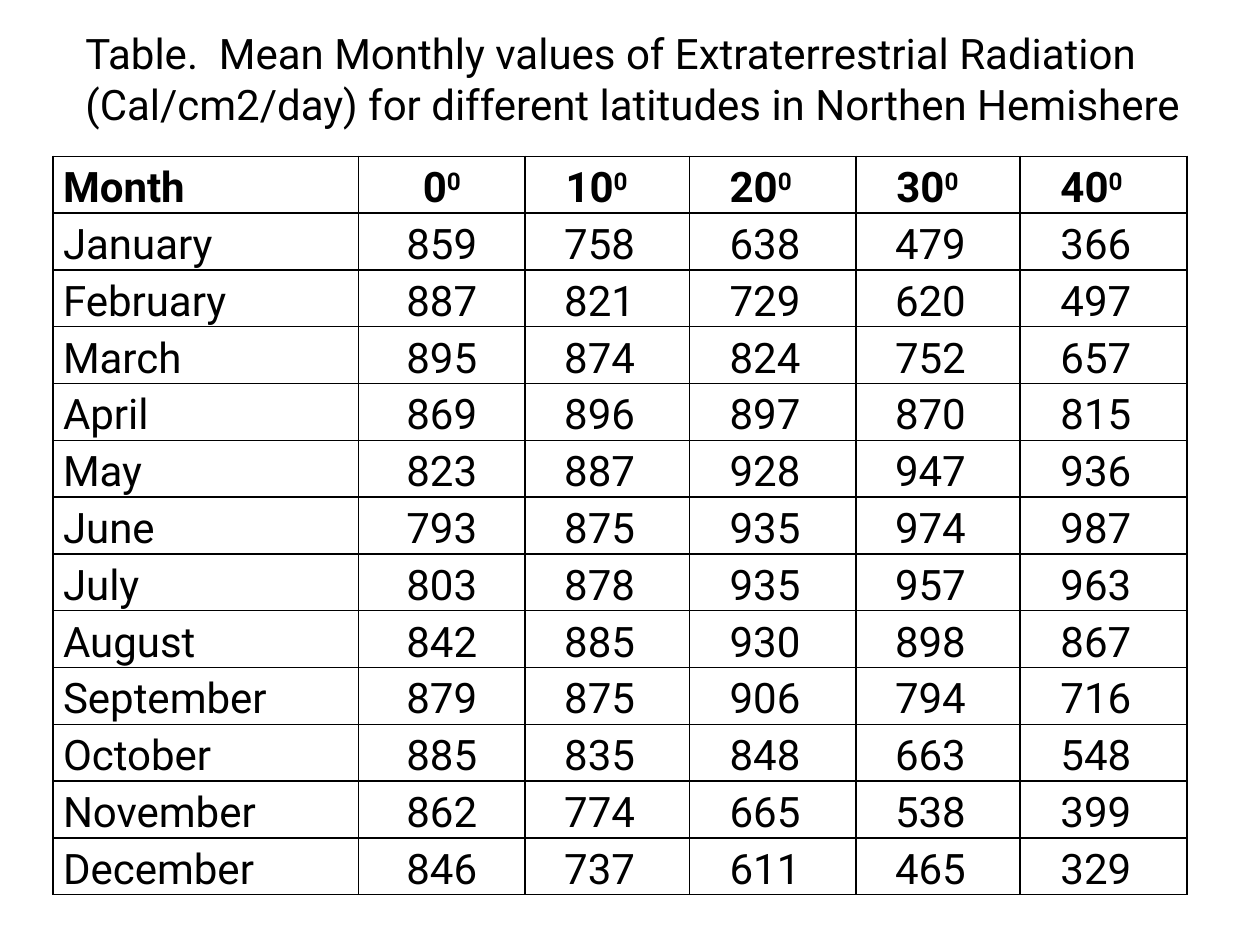
import pptx
import pptx.dml.color
import pptx.enum.text
import pptx.oxml
import pptx.oxml.ns
import pptx.util

SLIDE_W, SLIDE_H = 10, 7.5
FONT, SIZE, INK = "Roboto", 24, "000000"
CAPTION = ("Table.  Mean Monthly values of Extraterrestrial Radiation "
           "(Cal/cm2/day) for different latitudes in Northen Hemishere")
LATITUDES = [0, 10, 20, 30, 40]
RADIATION = {
    "January": [859, 758, 638, 479, 366],
    "February": [887, 821, 729, 620, 497],
    "March": [895, 874, 824, 752, 657],
    "April": [869, 896, 897, 870, 815],
    "May": [823, 887, 928, 947, 936],
    "June": [793, 875, 935, 974, 987],
    "July": [803, 878, 935, 957, 963],
    "August": [842, 885, 930, 898, 867],
    "September": [879, 875, 906, 794, 716],
    "October": [885, 835, 848, 663, 548],
    "November": [862, 774, 665, 538, 399],
    "December": [846, 737, 611, 465, 329],
}
COLUMN_WIDTHS = [2.42, 1.32, 1.3, 1.32, 1.3, 1.32]
INDENTS = [0.08, None, 0.31, 0.32, 0.31, 0.32]  # None: centred column
HEADER_INDENT = 0.32
ROW_HEIGHT = 0.39


def inches(*lengths):
    return [pptx.util.Inches(length) for length in lengths]


def color(hex_string):
    return pptx.dml.color.RGBColor.from_string(hex_string)


def style_text(paragraph, bold=False):
    font = paragraph.font
    font.name, font.size, font.bold = FONT, pptx.util.Pt(SIZE), bold
    font.color.rgb = color(INK)


def border_cell(cell):
    properties = cell._tc.get_or_add_tcPr()
    for side in ("lnL", "lnR", "lnT", "lnB"):
        properties.append(pptx.oxml.parse_xml(
            f'<a:{side} {pptx.oxml.ns.nsdecls("a")} w="{pptx.util.Pt(1)}">'
            f'<a:solidFill><a:srgbClr val="{INK}"/></a:solidFill></a:{side}>'))


def fill_cell(cell, text, indent, header=False, degree=False):
    border_cell(cell)
    cell.fill.background()
    cell.margin_left = cell.margin_right = cell.margin_top = cell.margin_bottom = 0
    cell.vertical_anchor = pptx.enum.text.MSO_ANCHOR.BOTTOM
    paragraph = cell.text_frame.paragraphs[0]
    paragraph.line_spacing = 1.15
    if indent is None:
        paragraph.alignment = pptx.enum.text.PP_ALIGN.CENTER
    else:
        paragraph.alignment = pptx.enum.text.PP_ALIGN.LEFT
        paragraph._p.get_or_add_pPr().set("marL", str(pptx.util.Inches(indent)))
    style_text(paragraph, bold=header)
    paragraph.add_run().text = str(text)
    if degree:
        # The degree sign is a raised zero
        raised = paragraph.add_run()
        raised.text = "0"
        raised.font._element.set("baseline", "30000")


def add_caption(slide, left, top, width, height):
    frame = slide.shapes.add_textbox(*inches(left, top, width, height)).text_frame
    frame.word_wrap = True
    caption = frame.paragraphs[0]
    caption.add_run().text = CAPTION
    style_text(caption)


def add_radiation_table(slide, left, top, width):
    row_count = len(RADIATION) + 1
    table = slide.shapes.add_table(
        row_count, len(COLUMN_WIDTHS),
        *inches(left, top, width, row_count * ROW_HEIGHT)).table
    table.first_row = table.horz_banding = False
    scale = width / sum(COLUMN_WIDTHS)
    for column, share in zip(table.columns, COLUMN_WIDTHS):
        column.width = pptx.util.Inches(share * scale)
    for row in table.rows:
        row.height = pptx.util.Inches(ROW_HEIGHT)

    # Header row: month and latitudes
    for c, heading in enumerate(["Month"] + LATITUDES):
        indent = HEADER_INDENT if c > 1 else INDENTS[c]
        fill_cell(table.cell(0, c), heading, indent, header=True, degree=c > 0)

    # One row per month
    for r, (month, values) in enumerate(RADIATION.items(), start=1):
        for c, entry in enumerate([month] + values):
            fill_cell(table.cell(r, c), entry, INDENTS[c])


def main():
    deck = pptx.Presentation()
    deck.slide_width, deck.slide_height = inches(SLIDE_W, SLIDE_H)
    slide = deck.slides.add_slide(deck.slide_layouts[6])
    add_radiation_table(slide, 0.42, 1.24, 9)
    add_caption(slide, 0.58, 0.17, 9.17, 0.91)
    deck.save("out.pptx")


if __name__ == "__main__":
    main()
